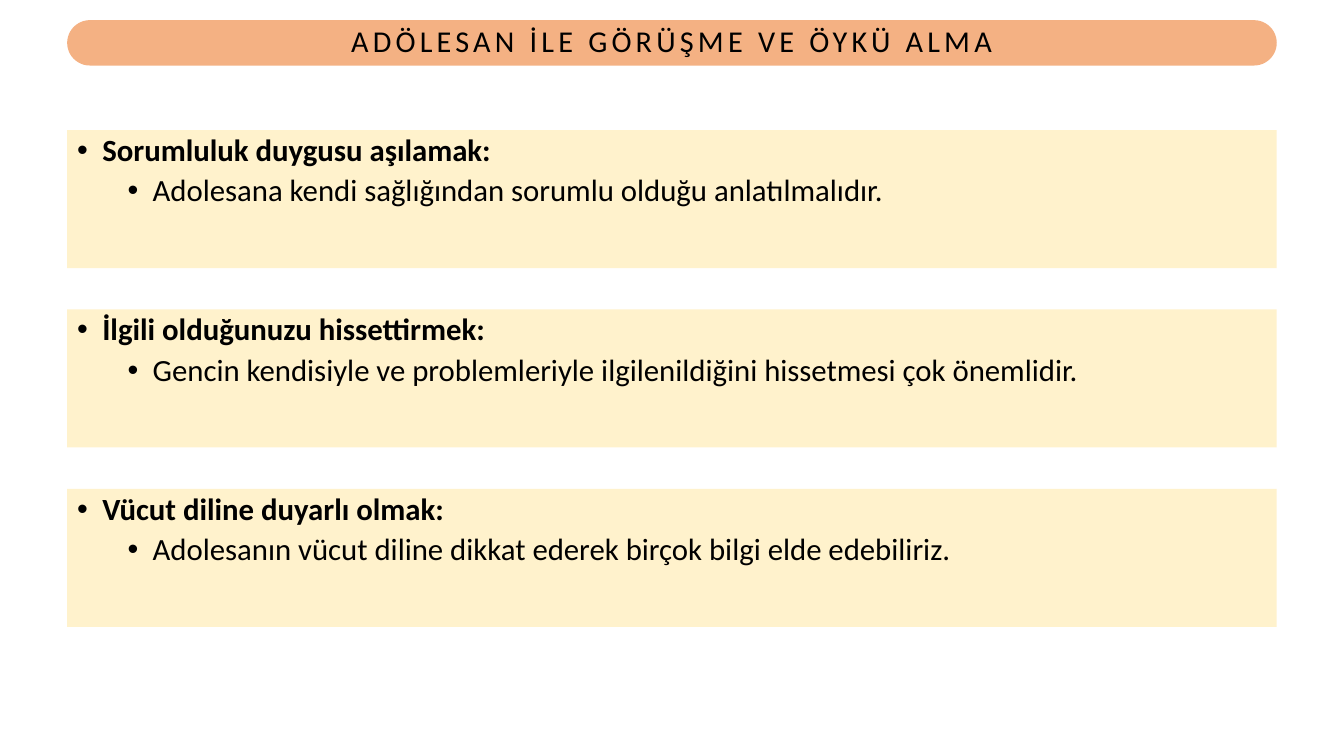
from lxml import etree
from pptx import Presentation
from pptx.dml.color import RGBColor
from pptx.enum.shapes import MSO_SHAPE
from pptx.enum.text import MSO_ANCHOR, PP_ALIGN
from pptx.oxml.ns import qn
from pptx.util import Inches, Pt

PILL, BOX = MSO_SHAPE.ROUNDED_RECTANGLE, MSO_SHAPE.RECTANGLE
TOP, MIDDLE = MSO_ANCHOR.TOP, MSO_ANCHOR.MIDDLE
LEFT, CENTER = PP_ALIGN.LEFT, PP_ALIGN.CENTER

TITLE = "ADÖLESAN İLE GÖRÜŞME VE ÖYKÜ ALMA"
PRINCIPLES = [
    ("Sorumluluk duygusu aşılamak:",
     "Adolesana kendi sağlığından sorumlu olduğu anlatılmalıdır."),
    ("İlgili olduğunuzu hissettirmek:",
     "Gencin kendisiyle ve problemleriyle ilgilenildiğini hissetmesi çok önemlidir."),
    ("Vücut diline duyarlı olmak:",
     "Adolesanın vücut diline dikkat ederek birçok bilgi elde edebiliriz."),
]


def color(hex_code):
    return RGBColor.from_string(hex_code)


class InterviewSlide:
    """Style and slide; lengths are in a grid of 20 columns by 75 rows."""
    COLUMNS, ROWS = 20, 75
    FONT, INK = "Calibri", "000000"
    TITLE_FILL, CARD_FILL = "F4B183", "FFF2CC"

    def __init__(self, deck):
        self.slide = deck.slides.add_slide(deck.slide_layouts[6])
        self.column = deck.slide_width / self.COLUMNS
        self.row = deck.slide_height / self.ROWS

    def band(self, kind, top, height, fill, anchor):
        """Full-width filled shape, one column in from either edge."""
        band = self.slide.shapes.add_shape(
            kind, int(self.column), int(top * self.row),
            int((self.COLUMNS - 2) * self.column), int(height * self.row))
        band.shadow.inherit = False
        band.fill.solid()
        band.fill.fore_color.rgb = color(fill)
        band.line.fill.background()
        band.text_frame.word_wrap = True
        band.text_frame.vertical_anchor = anchor
        return band

    def set_text(self, paragraph, text, size, align, bold=False):
        paragraph.text = text
        paragraph.alignment = align
        paragraph.line_spacing = 0.9
        run = paragraph.runs[0]
        run.font.name = self.FONT
        run.font.size = Pt(size)
        run.font.bold = bold
        run.font.color.rgb = color(self.INK)
        return run

    def bullet(self, paragraph, indent):
        properties = paragraph._p.get_or_add_pPr()
        properties.set("marL", str(Inches(indent)))
        properties.set("indent", str(Inches(-0.25)))
        etree.SubElement(properties, qn("a:buFont")).set("typeface", "Arial")
        etree.SubElement(properties, qn("a:buChar")).set("char", "•")

    def title(self, text, top, height):
        pill = self.band(PILL, top, height, self.TITLE_FILL, MIDDLE)
        pill.adjustments[0] = 0.5
        run = self.set_text(pill.text_frame.paragraphs[0], text, 21.6, CENTER)
        run.font._element.set("spc", "300")

    def card(self, heading, detail, top, height):
        frame = self.band(BOX, top, height, self.CARD_FILL, TOP).text_frame
        lead = frame.paragraphs[0]
        self.set_text(lead, heading, 22, LEFT, bold=True)
        self.bullet(lead, 0.25)
        point = frame.add_paragraph()
        point.level = 1
        self.set_text(point, detail, 22, LEFT)
        point.space_before = Pt(5)
        self.bullet(point, 0.75)


def main():
    deck = Presentation()
    deck.slide_width, deck.slide_height = Inches(13.33), Inches(7.5)
    page = InterviewSlide(deck)

    # Title pill
    page.title(TITLE, top=2, height=4.5)

    # Evenly spaced cards, one per principle
    for index, (heading, detail) in enumerate(PRINCIPLES):
        page.card(heading, detail, top=12.9 + 17.8 * index, height=13.7)

    deck.save("out.pptx")


if __name__ == "__main__":
    main()
